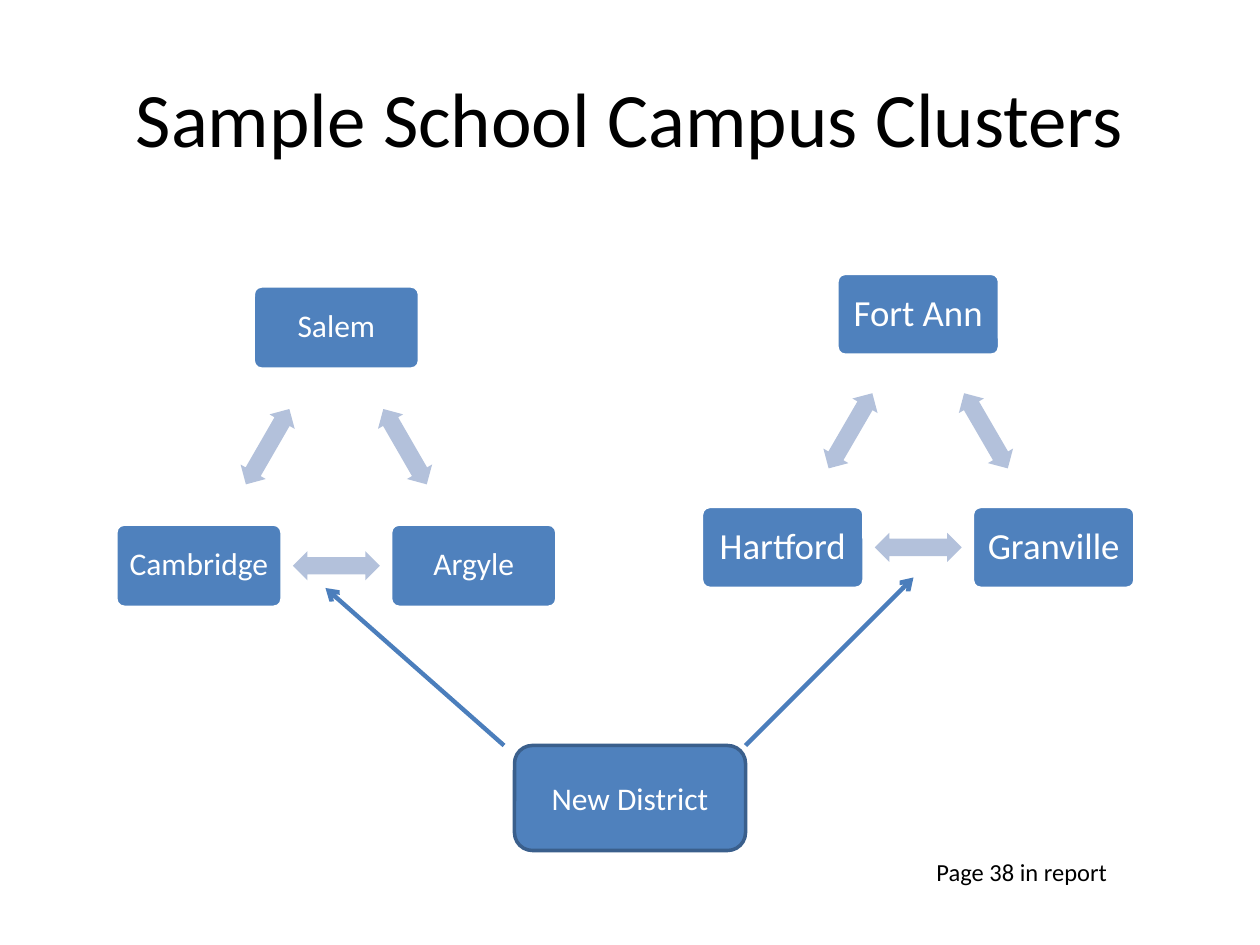
from math import atan2, degrees

from lxml.etree import SubElement
from pptx import Presentation
from pptx.dml.color import RGBColor
from pptx.enum.shapes import MSO_CONNECTOR, MSO_SHAPE
from pptx.enum.text import MSO_ANCHOR, PP_ALIGN
from pptx.oxml.ns import qn
from pptx.util import Pt

BLACK = RGBColor(0x00, 0x00, 0x00)
WHITE = RGBColor(0xFF, 0xFF, 0xFF)
BLUE = RGBColor(0x4F, 0x81, 0xBD)
NAVY = RGBColor(0x3A, 0x5F, 0x8C)
PALE = RGBColor(0xB3, 0xC1, 0xDB)
LINK = RGBColor(0x4B, 0x7E, 0xBC)


class Board:
    font = "Calibri"

    def __init__(self, slide):
        self.shapes = slide.shapes

    def set_text(self, shape, text, size, color, align, anchor, inset=None, space=1):
        frame = shape.text_frame
        frame.text = text
        frame.word_wrap = True
        frame.vertical_anchor = anchor
        if inset is not None:
            frame.margin_left = frame.margin_right = Pt(inset)
            frame.margin_top = frame.margin_bottom = Pt(inset)
        for para in frame.paragraphs:
            para.alignment = align
            para.line_spacing = space
            for run in para.runs:
                run.font.name = self.font
                run.font.size = Pt(size)
                run.font.color.rgb = color

    def label(self, x, y, w, h, text, size, align, anchor):
        box = self.shapes.add_textbox(Pt(x), Pt(y), Pt(w), Pt(h))
        self.set_text(box, text, size, BLACK, align, anchor)

    def shape(self, kind, center, size, fill):
        """Add a plain filled shape around its center."""
        (x, y), (w, h) = center, size
        shape = self.shapes.add_shape(kind, Pt(x - w / 2), Pt(y - h / 2), Pt(w), Pt(h))
        shape.shadow.inherit = False
        shape.fill.solid()
        shape.fill.fore_color.rgb = fill
        shape.line.fill.background()
        return shape

    def box(self, center, size, text, points, edge, curve, inset=None, space=1):
        box = self.shape(MSO_SHAPE.ROUNDED_RECTANGLE, center, size, BLUE)
        box.adjustments[0] = curve
        box.line.color.rgb = edge
        box.line.width = Pt(2)
        self.set_text(box, text, points, WHITE, PP_ALIGN.CENTER, MSO_ANCHOR.MIDDLE,
                      inset, space)

    def arrow(self, start, end):
        """Set a two-way block arrow midway between two points."""
        (x1, y1), (x2, y2) = start, end
        middle = (x1 + x2) / 2, (y1 + y2) / 2
        arrow = self.shape(MSO_SHAPE.LEFT_RIGHT_ARROW, middle, (49.7, 16.6), PALE)
        arrow.adjustments[0] = 0.6
        arrow.adjustments[1] = 0.5
        arrow.rotation = degrees(atan2(y2 - y1, x2 - x1)) % 360

    def cluster(self, top, reach, drop, size, names, points, inset):
        """Join three schools in a triangle, clockwise from the top."""
        x, y = top
        spots = [top, (x + reach, y + drop), (x - reach, y + drop)]
        for i, (spot, name) in enumerate(zip(spots, names)):
            self.box(spot, size, name, points, WHITE, 0.1, inset, 0.9)
            self.arrow(spot, spots[(i + 1) % 3])

    def line(self, start, end):
        line = self.shapes.add_connector(MSO_CONNECTOR.STRAIGHT, *map(Pt, start + end))
        line.line.color.rgb = LINK
        line.line.width = Pt(2.5)
        props = line._element.spPr
        SubElement(props.find(qn("a:ln")), qn("a:tailEnd"), type="arrow")
        SubElement(props, qn("a:effectLst"))


def main():
    deck = Presentation()
    deck.slide_width, deck.slide_height = Pt(720), Pt(540)
    board = Board(deck.slides.add_slide(deck.slide_layouts[6]))

    board.label(36, 21.6, 648, 90, "Sample School Campus Clusters", 44,
                PP_ALIGN.CENTER, MSO_ANCHOR.MIDDLE)
    board.cluster((192.2, 187.2), 78.5, 136.1, (95, 47.5),
                  ("Salem", "Argyle", "Cambridge"), 18, 5)
    board.cluster((524.7, 179.6), 77.4, 133.2, (92.9, 46.8),
                  ("Fort Ann", "Granville", "Hartford"), 21, 6.5)
    board.box((360, 456), (132, 60), "New District", 18, NAVY, 0.17)
    board.line((288, 426), (186, 336))
    board.line((426, 426), (522, 330))
    board.label(528, 486, 156, 24.5, "Page 38 in report", 14,
                PP_ALIGN.LEFT, MSO_ANCHOR.TOP)
    deck.save("out.pptx")


if __name__ == "__main__":
    main()
